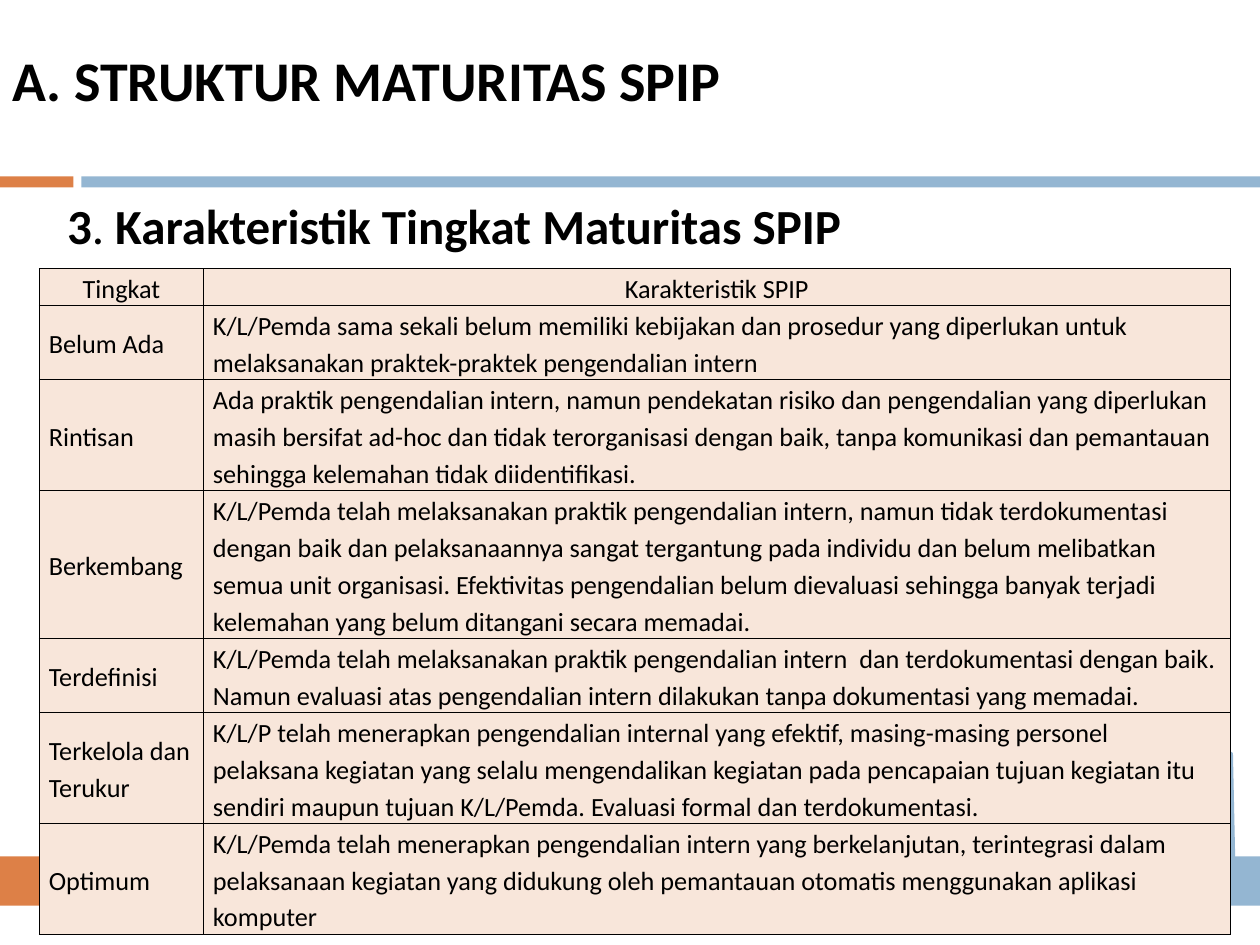
from dataclasses import dataclass

from lxml.etree import SubElement
from pptx import Presentation
from pptx.dml.color import RGBColor
from pptx.enum.shapes import MSO_SHAPE
from pptx.enum.text import MSO_ANCHOR as Anchor, PP_ALIGN as Align
from pptx.oxml.ns import qn
from pptx.util import Pt


@dataclass(frozen=True)
class Theme:
    font: str = "Calibri"
    ink: str = "000000"
    orange: str = "DD8047"
    blue: str = "94B6D2"
    window: str = "FFFFFF"
    cell: str = "F8E6DA"
    heading_size: float = 32
    subheading_size: float = 28
    table_size: float = 15
    table_spacing: float = 1.15
    line_height: float = 21.14
    border: float = 0.5


THEME = Theme()

# (left, top, width, height, colour)
BANDS = [
    (0, 100.8, 42, 6.3, THEME.orange),
    (46.5, 100.8, 673.5, 6.3, THEME.blue),
    (146.2, 489.4, 573.8, 28.1, THEME.blue),
    (0, 489.4, 90, 28.1, THEME.orange),
]

# Outline in hundredths of an inch
SKYLINE_UNIT = Pt(0.72)
SKYLINE = [
    (555, 685), (555, 666), (567, 665), (568, 675), (575, 675), (575, 657),
    (582, 654), (597, 654), (598, 660), (605, 658), (605, 665), (644, 665),
    (644, 631), (663, 625), (663, 675), (671, 674), (671, 661), (687, 656),
    (700, 655), (700, 682), (714, 683), (714, 604), (750, 604), (758, 616),
    (758, 643), (781, 643), (781, 655), (820, 655), (819, 644), (849, 644),
    (849, 677), (857, 676), (862, 668), (866, 648), (887, 648), (887, 681),
    (897, 681), (900, 580), (953, 580), (978, 598), (980, 692), (555, 694),
]

# (left, top, height)
WINDOW_WIDTH = 5.8
WINDOWS = [
    (524.9, 439.9, 3.6), (524.9, 452.2, 3.6), (524.9, 464.4, 3.6),
    (677.5, 429.8, 3.6), (572.4, 454.3, 5.8), (666, 429.8, 3.6),
    (677.5, 440.6, 3.6),
]

COLUMN_WIDTHS = (93.8, 586.6)
HEADER = ("Tingkat", "Karakteristik SPIP")

# (level, characteristics, lines of text)
LEVELS = [
    ("Belum Ada",
     "K/L/Pemda sama sekali belum memiliki kebijakan dan prosedur yang diperlukan untuk "
     "melaksanakan praktek-praktek pengendalian intern", 2),
    ("Rintisan",
     "Ada praktik pengendalian intern, namun pendekatan risiko dan pengendalian yang diperlukan "
     "masih bersifat ad-hoc dan tidak terorganisasi dengan baik, tanpa komunikasi dan pemantauan "
     "sehingga kelemahan tidak diidentifikasi.", 3),
    ("Berkembang",
     "K/L/Pemda telah melaksanakan praktik pengendalian intern, namun tidak terdokumentasi "
     "dengan baik dan pelaksanaannya sangat tergantung pada individu dan belum melibatkan "
     "semua unit organisasi. Efektivitas pengendalian belum dievaluasi sehingga banyak terjadi "
     "kelemahan yang belum ditangani secara memadai.", 4),
    ("Terdefinisi",
     "K/L/Pemda telah melaksanakan praktik pengendalian intern  dan terdokumentasi dengan baik. "
     "Namun evaluasi atas pengendalian intern dilakukan tanpa dokumentasi yang memadai.", 2),
    ("Terkelola dan Terukur",
     "K/L/P telah menerapkan pengendalian internal yang efektif, masing-masing personel "
     "pelaksana kegiatan yang selalu mengendalikan kegiatan pada pencapaian tujuan kegiatan itu "
     "sendiri maupun tujuan K/L/Pemda. Evaluasi formal dan terdokumentasi.", 3),
    ("Optimum",
     "K/L/Pemda telah menerapkan pengendalian intern yang berkelanjutan, terintegrasi dalam "
     "pelaksanaan kegiatan yang didukung oleh pemantauan otomatis menggunakan aplikasi "
     "komputer", 3),
]


def rgb(colour):
    return RGBColor.from_string(colour)


def paint(shape, colour):
    shape.shadow.inherit = False
    shape.fill.solid()
    shape.fill.fore_color.rgb = rgb(colour)


def add_block(slide, left, top, width, height, colour):
    block = slide.shapes.add_shape(
        MSO_SHAPE.RECTANGLE, Pt(left), Pt(top), Pt(width), Pt(height))
    paint(block, colour)
    block.line.fill.background()


def add_skyline(slide):
    start, *rest = SKYLINE
    builder = slide.shapes.build_freeform(*start, scale=SKYLINE_UNIT)
    builder.add_line_segments(rest, close=True)
    skyline = builder.convert_to_shape()
    paint(skyline, THEME.blue)
    skyline.line.color.rgb = rgb(THEME.blue)
    skyline.line.width = Pt(0.79)
    for left, top, height in WINDOWS:
        add_block(slide, left, top, WINDOW_WIDTH, height, THEME.window)


def add_run(paragraph, text, size, bold=False):
    run = paragraph.add_run()
    run.text = text
    run.font.name = THEME.font
    run.font.size = Pt(size)
    run.font.bold = bold
    run.font.color.rgb = rgb(THEME.ink)


def add_heading(slide, left, top, width, height, size, anchor, runs):
    """Add a one-line heading; runs holds (text, bold) pairs."""
    frame = slide.shapes.add_textbox(Pt(left), Pt(top), Pt(width), Pt(height)).text_frame
    frame.word_wrap = True
    frame.vertical_anchor = anchor
    for text, bold in runs:
        add_run(frame.paragraphs[0], text, size, bold)


def add_borders(cell):
    properties = cell._tc.get_or_add_tcPr()
    for side in ("lnL", "lnR", "lnT", "lnB"):
        line = SubElement(properties, qn(f"a:{side}"), w=str(Pt(THEME.border)))
        fill = SubElement(line, qn("a:solidFill"))
        SubElement(fill, qn("a:srgbClr"), val=THEME.ink)


def fill_cell(cell, text, align, anchor):
    add_borders(cell)
    cell.fill.solid()
    cell.fill.fore_color.rgb = rgb(THEME.cell)
    cell.margin_left = cell.margin_right = Pt(5.4)
    cell.margin_top = cell.margin_bottom = 0
    cell.vertical_anchor = anchor
    paragraph = cell.text_frame.paragraphs[0]
    paragraph.alignment = align
    paragraph.line_spacing = THEME.table_spacing
    add_run(paragraph, text, THEME.table_size)


def add_level_table(slide, left, top):
    rows = [(*HEADER, 1), *LEVELS]
    height = THEME.line_height * sum(lines for _, _, lines in rows)
    table = slide.shapes.add_table(
        len(rows), len(HEADER), Pt(left), Pt(top), Pt(sum(COLUMN_WIDTHS)), Pt(height)).table
    table.first_row = table.horz_banding = False
    for column, width in zip(table.columns, COLUMN_WIDTHS):
        column.width = Pt(width)
    for index, (level, characteristics, lines) in enumerate(rows):
        is_header = index == 0
        align = Align.CENTER if is_header else Align.LEFT
        table.rows[index].height = Pt(THEME.line_height * lines)
        fill_cell(table.cell(index, 0), level, align, Anchor.MIDDLE)
        fill_cell(table.cell(index, 1), characteristics, align,
                  Anchor.MIDDLE if is_header else Anchor.TOP)


def main():
    deck = Presentation()
    deck.slide_width, deck.slide_height = Pt(720), Pt(540)
    slide = deck.slides.add_slide(deck.slide_layouts[6])
    for band in BANDS:
        add_block(slide, *band)
    add_skyline(slide)
    add_heading(slide, 31.2, 103.7, 672, 49.7, THEME.subheading_size, Anchor.MIDDLE,
                [("3", True), (". ", False), ("Karakteristik Tingkat Maturitas SPIP", True)])
    add_level_table(slide, 22.5, 153.4)
    add_heading(slide, 0, 22.3, 720, 67.7, THEME.heading_size, Anchor.TOP,
                [("A. STRUKTUR MATURITAS SPIP", True)])
    deck.save("out.pptx")


if __name__ == "__main__":
    main()
